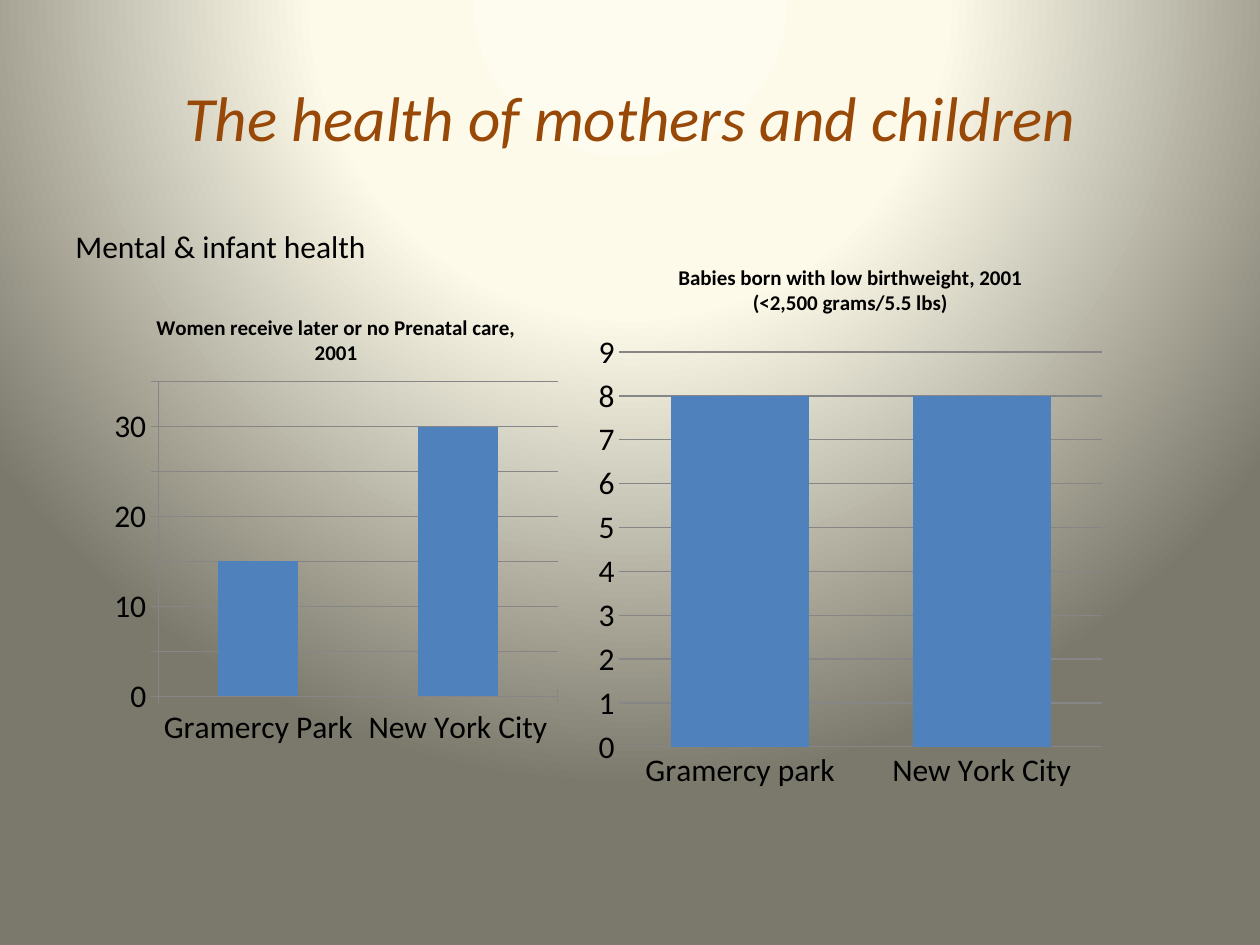
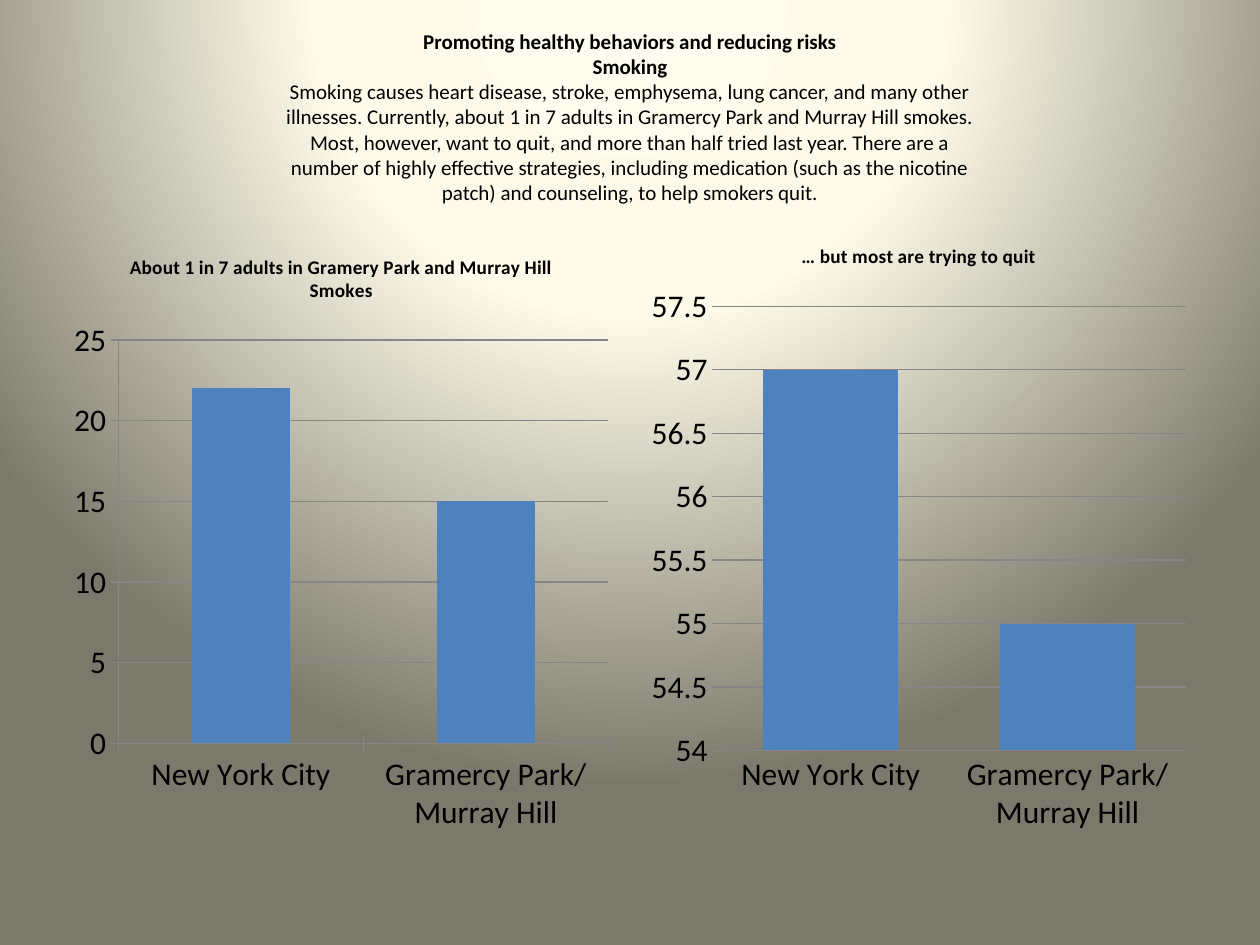
from dataclasses import dataclass

from pptx import Presentation
from pptx import util as u
from pptx.chart.data import CategoryChartData
from pptx.dml.color import RGBColor
from pptx.enum import chart as ch
from pptx.enum import text as t
from pptx.oxml import parse_xml
from pptx.oxml.ns import nsdecls, qn

WIDTH, HEIGHT = u.Inches(10), u.Inches(7.5)
COLUMNS, ROWS = 120, 90


@dataclass(frozen=True)
class Theme:
    """Colours, font and type sizes shared by the slides."""
    font: str = "Calibri"
    ink: str = "000000"
    heading: str = "984807"
    bar: str = "4F81BD"
    rule: str = "868686"
    backdrop: tuple = ((0, "FEFCEE"), (40, "FDFAEA"), (100, "7B796B"))
    heading_size: int = 36
    body_size: int = 18
    note_size: int = 12
    small_size: int = 11


@dataclass(frozen=True)
class Bars:
    """Content and scale of one bar chart."""
    title: str
    title_size: int
    categories: tuple
    values: tuple
    low: float
    high: float
    step: float
    framed: bool


THEME = Theme()
TITLE_BOX = (6, 3.6, 108, 15)


def place(box):
    """Turn a box of grid columns and rows into slide lengths."""
    left, top, width, height = box
    return (int(WIDTH * left / COLUMNS), int(HEIGHT * top / ROWS),
            int(WIDTH * width / COLUMNS), int(HEIGHT * height / ROWS))


def style(font, size, color=THEME.ink, bold=False, italic=False):
    """Apply the theme font with the given size and look."""
    font.name, font.size = THEME.font, u.Pt(size)
    font.bold, font.italic = bold, italic
    font.color.rgb = RGBColor.from_string(color)


def paint_backdrop(master):
    """Give the master a circular gradient centred above the slide."""
    master.background.fill.solid()
    stops = "".join(f'<a:gs pos="{pos * 1000}"><a:srgbClr val="{color}"/></a:gs>'
                    for pos, color in THEME.backdrop)
    gradient = parse_xml(
        f'<a:gradFill {nsdecls("a")} rotWithShape="1"><a:gsLst>{stops}</a:gsLst>'
        '<a:path path="circle"><a:fillToRect l="50000" t="-80000" r="50000" b="180000"/>'
        '</a:path></a:gradFill>')
    solid = next(master.element.iter(qn("a:solidFill")))
    solid.getparent().replace(solid, gradient)


def titled_slide(prs):
    """Add a title-only slide and return it with its title paragraph."""
    slide = prs.slides.add_slide(prs.slide_layouts[5])
    title = slide.shapes.title
    title.left, title.top, title.width, title.height = place(TITLE_BOX)
    frame = title.text_frame
    frame.auto_size = t.MSO_AUTO_SIZE.NONE
    frame.vertical_anchor = t.MSO_ANCHOR.MIDDLE
    frame.paragraphs[0].alignment = t.PP_ALIGN.CENTER
    return slide, frame.paragraphs[0]


def add_lines(paragraph, lines, bold):
    """Add lines to a paragraph, with a line break between them."""
    for line in lines:
        if paragraph.runs:
            paragraph.add_line_break()
        run = paragraph.add_run()
        run.text = line
        run.font.bold = bold


def add_subheading(slide, box, wording):
    """Add a left-aligned subheading."""
    frame = slide.shapes.add_textbox(*place(box)).text_frame
    frame.word_wrap = True
    frame.text = wording
    style(frame.paragraphs[0].font, THEME.body_size)


def format_axes(chart, bars):
    """Set scale, rules and tick marks of both axes."""
    rule = RGBColor.from_string(THEME.rule)
    scale = chart.value_axis
    scale.minimum_scale, scale.maximum_scale = bars.low, bars.high
    scale.major_unit = bars.step
    scale.has_major_gridlines = True
    for line in (scale.major_gridlines.format.line, scale.format.line,
                 chart.category_axis.format.line):
        line.color.rgb = rule
        line.width = u.Pt(0.75)
    for axis in (scale, chart.category_axis):
        axis.major_tick_mark = ch.XL_TICK_MARK.CROSS if bars.framed else ch.XL_TICK_MARK.NONE
        axis.minor_tick_mark = ch.XL_TICK_MARK.NONE
    if not bars.framed:
        scale.format.line.fill.background()


def add_bars(slide, box, bars):
    """Add a titled bar chart in the given box."""
    figures = CategoryChartData()
    figures.categories = bars.categories
    figures.add_series("Series 1", bars.values)
    chart = slide.shapes.add_chart(ch.XL_CHART_TYPE.COLUMN_STACKED,
                                   *place(box), figures).chart
    style(chart.font, THEME.body_size)
    chart.has_legend = False
    heading = chart.chart_title.text_frame
    heading.text = bars.title
    for paragraph in heading.paragraphs:
        style(paragraph.font, bars.title_size, bold=True)
    plot = chart.plots[0]
    plot.vary_by_categories = False
    plot.overlap = 100
    plot.gap_width = 150 if bars.framed else 75
    fill = plot.series[0].format.fill
    fill.solid()
    fill.fore_color.rgb = RGBColor.from_string(THEME.bar)
    format_axes(chart, bars)


def mothers_slide(prs):
    """Build the slide on mothers and children."""
    slide, title = titled_slide(prs)
    add_lines(title, ["The health of mothers and children"], False)
    style(title.font, THEME.heading_size, THEME.heading, italic=True)
    add_subheading(slide, (6, 21, 53, 6), "Mental & infant health")
    add_bars(slide, (10, 28, 44, 44), Bars(
        "Women receive later or no Prenatal care, 2001", THEME.note_size,
        ("Gramercy Park", "New York City"), (15, 30), 0, 35, 5, True))
    add_bars(slide, (56, 23, 50, 53.3), Bars(
        "Babies born with low birthweight, 2001\n(<2,500 grams/5.5 lbs)", THEME.note_size,
        ("Gramercy park", "New York City"), (8, 8), 0, 9, 1, False))


def smoking_slide(prs):
    """Build the slide on smoking."""
    slide, title = titled_slide(prs)
    add_lines(title, ["Promoting healthy behaviors and reducing risks", "Smoking"], True)
    add_lines(title, [
        "Smoking causes heart disease, stroke, emphysema, lung cancer, and many other",
        "illnesses. Currently, about 1 in 7 adults in Gramercy Park and Murray Hill smokes.",
        "Most, however, want to quit, and more than half tried last year. There are a",
        "number of highly effective strategies, including medication (such as the nicotine",
        "patch) and counseling, to help smokers quit."], False)
    style(title.font, THEME.note_size)
    places = ("New York City", "Gramercy Park/ Murray Hill")
    add_bars(slide, (6, 22, 53, 58.4), Bars(
        "About 1 in 7 adults in Gramery Park and Murray Hill Smokes", THEME.small_size,
        places, (22, 15), 0, 25, 5, True))
    add_bars(slide, (61, 21, 53, 59.4), Bars(
        "… but most are trying to quit", THEME.small_size,
        places, (57, 55), 54, 57.5, 0.5, False))


def main():
    """Build and save the presentation."""
    prs = Presentation()
    prs.slide_width, prs.slide_height = WIDTH, HEIGHT
    paint_backdrop(prs.slide_master)
    mothers_slide(prs)
    smoking_slide(prs)
    prs.save("out.pptx")


if __name__ == "__main__":
    main()
